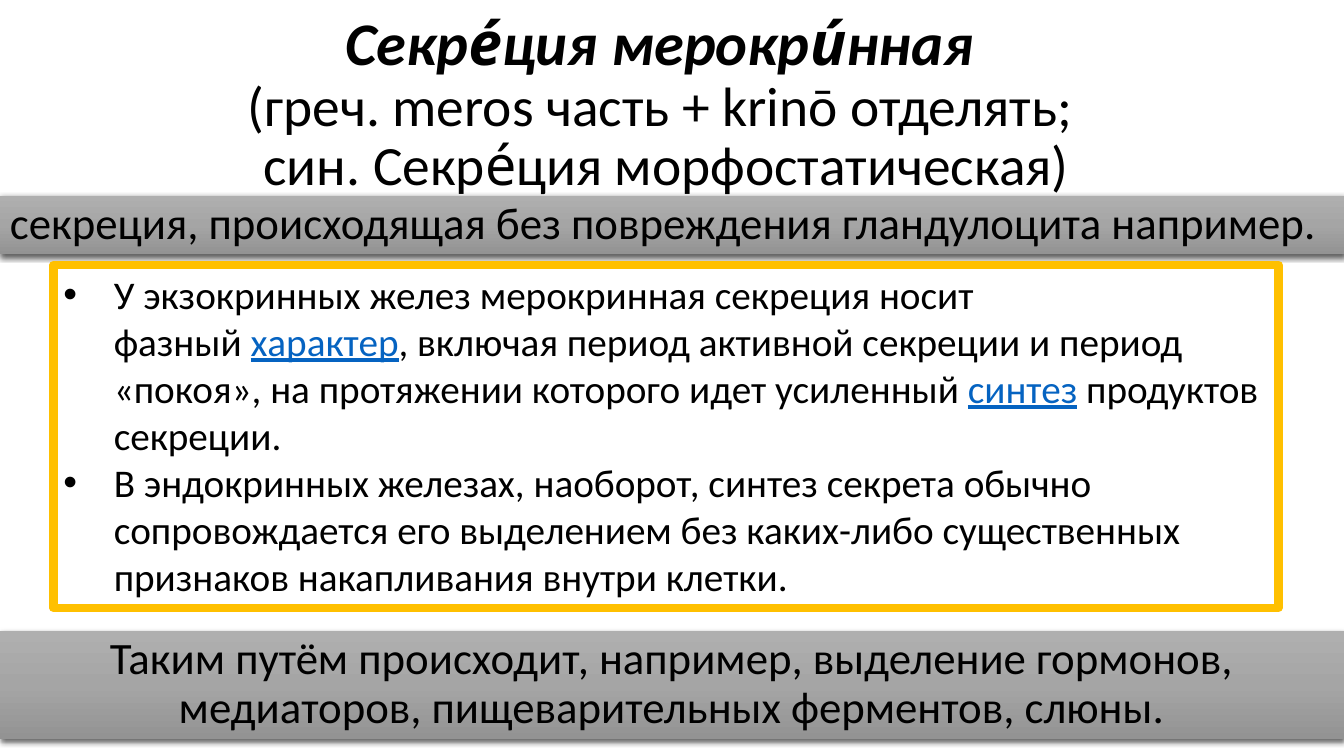
import pptx
import pptx.dml.color
import pptx.enum.shapes
import pptx.enum.text
import pptx.oxml
import pptx.oxml.ns
import pptx.util
from pptx.util import Inches

FONT = "Calibri"
NBSP = chr(160)
BLACK, LINK_BLUE, GOLD = "000000", "0563C1", "FFC000"
BAND_STOPS = [(0, "AFAFAF"), (50, "A5A5A5"), (100, "939393")]
NS = pptx.oxml.ns.nsdecls("a")
CENTER = pptx.enum.text.PP_ALIGN.CENTER
LEFT = pptx.enum.text.PP_ALIGN.LEFT
TOP = pptx.enum.text.MSO_ANCHOR.TOP
MIDDLE = pptx.enum.text.MSO_ANCHOR.MIDDLE


def rgb(color):
    return pptx.dml.color.RGBColor.from_string(color)


def add_text(paragraph, text, size, color=BLACK, bold=False, italic=False, underline=False):
    run = paragraph.add_run()
    run.text = text
    font = run.font
    font.name, font.size = FONT, pptx.util.Pt(size)
    font.bold, font.italic, font.underline = bold, italic, underline
    font.color.rgb = rgb(color)


def prepare_frame(shape, anchor):
    frame = shape.text_frame
    frame.word_wrap = True
    frame.auto_size = pptx.enum.text.MSO_AUTO_SIZE.NONE
    frame.vertical_anchor = anchor
    return frame


def add_box(slide, left, top, width, height):
    box = slide.shapes.add_shape(
        pptx.enum.shapes.MSO_SHAPE.RECTANGLE,
        Inches(left), Inches(top), Inches(width), Inches(height))
    box.shadow.inherit = False
    return box


def place_title(slide, left, top, width, height):
    title = slide.shapes.title
    title.left, title.top = Inches(left), Inches(top)
    title.width, title.height = Inches(width), Inches(height)
    paragraph = prepare_frame(title, MIDDLE).paragraphs[0]
    paragraph.alignment = CENTER
    paragraph.line_spacing = 0.9
    add_text(paragraph, f"Секре́ция мерокри́нная{NBSP}", 43.2, bold=True, italic=True)
    for line in ("(греч. meros часть + krinō отделять; ",
                 "син. Секре́ция морфостатическая)"):
        paragraph.add_line_break()
        add_text(paragraph, line, 39.6)


def add_band(slide, left, top, width, height, text, align):
    """Grey gradient strip with a soft shadow below it."""
    band = add_box(slide, left, top, width, height)
    band.line.fill.background()
    band.fill.gradient()
    band.fill.gradient_angle = 270
    properties = band.fill._xPr
    stops = properties.find(".//" + pptx.oxml.ns.qn("a:gsLst"))
    for stop in list(stops):
        stops.remove(stop)
    for position, color in BAND_STOPS:
        stops.append(pptx.oxml.parse_xml(
            f'<a:gs {NS} pos="{position * 1000}"><a:srgbClr val="{color}"/></a:gs>'))
    properties.find(pptx.oxml.ns.qn("a:effectLst")).append(pptx.oxml.parse_xml(
        f'<a:outerShdw {NS} blurRad="{pptx.util.Pt(4.5)}" dist="{pptx.util.Pt(1.5)}" '
        f'dir="5400000" algn="ctr" rotWithShape="0"><a:srgbClr val="{BLACK}">'
        '<a:alpha val="63000"/></a:srgbClr></a:outerShdw>'))
    paragraph = prepare_frame(band, TOP).paragraphs[0]
    paragraph.alignment = align
    paragraph.line_spacing = 0.9
    paragraph.space_before = pptx.util.Pt(10)
    add_text(paragraph, text, 32)


def add_bullet_panel(slide, left, top, width, height, items):
    """Gold frame; each item is a list of (text, is_link) pieces."""
    panel = add_box(slide, left, top, width, height)
    panel.fill.background()
    panel.line.color.rgb = rgb(GOLD)
    panel.line.width = pptx.util.Pt(6)
    frame = prepare_frame(panel, TOP)
    for index, pieces in enumerate(items):
        paragraph = frame.add_paragraph() if index else frame.paragraphs[0]
        paragraph.alignment = LEFT
        settings = paragraph._p.get_or_add_pPr()
        settings.set("marL", str(Inches(0.5)))
        settings.set("indent", str(-Inches(0.5)))
        settings.append(pptx.oxml.parse_xml(f'<a:buClr {NS}><a:srgbClr val="{BLACK}"/></a:buClr>'))
        settings.append(pptx.oxml.parse_xml(f'<a:buFont {NS} typeface="Arial"/>'))
        settings.append(pptx.oxml.parse_xml(f'<a:buChar {NS} char="•"/>'))
        for text, is_link in pieces:
            add_text(paragraph, text, 28, color=LINK_BLUE if is_link else BLACK,
                     underline=is_link)


def main():
    deck = pptx.Presentation()
    deck.slide_width, deck.slide_height = Inches(13.33), Inches(7.5)
    slide = deck.slides.add_slide(deck.slide_layouts.get_by_name("Title Only"))

    place_title(slide, 0, 0, 13.22, 2.09)
    add_band(slide, 0, 1.94, 13.33, 0.58,
             f"секреция, происходящая без{NBSP}повреждения{NBSP}гландулоцита например.",
             LEFT)
    add_band(slide, 0, 6.26, 13.33, 1.07,
             "Таким путём происходит, например, выделение гормонов, "
             "медиаторов, пищеварительных ферментов, слюны.", CENTER)
    add_bullet_panel(slide, 0.53, 2.63, 12.15, 3.4, [
        [(f"У экзокринных желез мерокринная секреция носит фазный{NBSP}", False),
         ("характер", True),
         (", включая период активной секреции и период «покоя», "
          f"на протяжении которого идет усиленный{NBSP}", False),
         ("синтез", True),
         (f"{NBSP}продуктов секреции.", False)],
        [("В эндокринных железах, наоборот, синтез секрета обычно "
          "сопровождается его выделением без каких-либо существенных "
          "признаков накапливания внутри клетки.", False)],
    ])
    deck.save("out.pptx")


if __name__ == "__main__":
    main()
